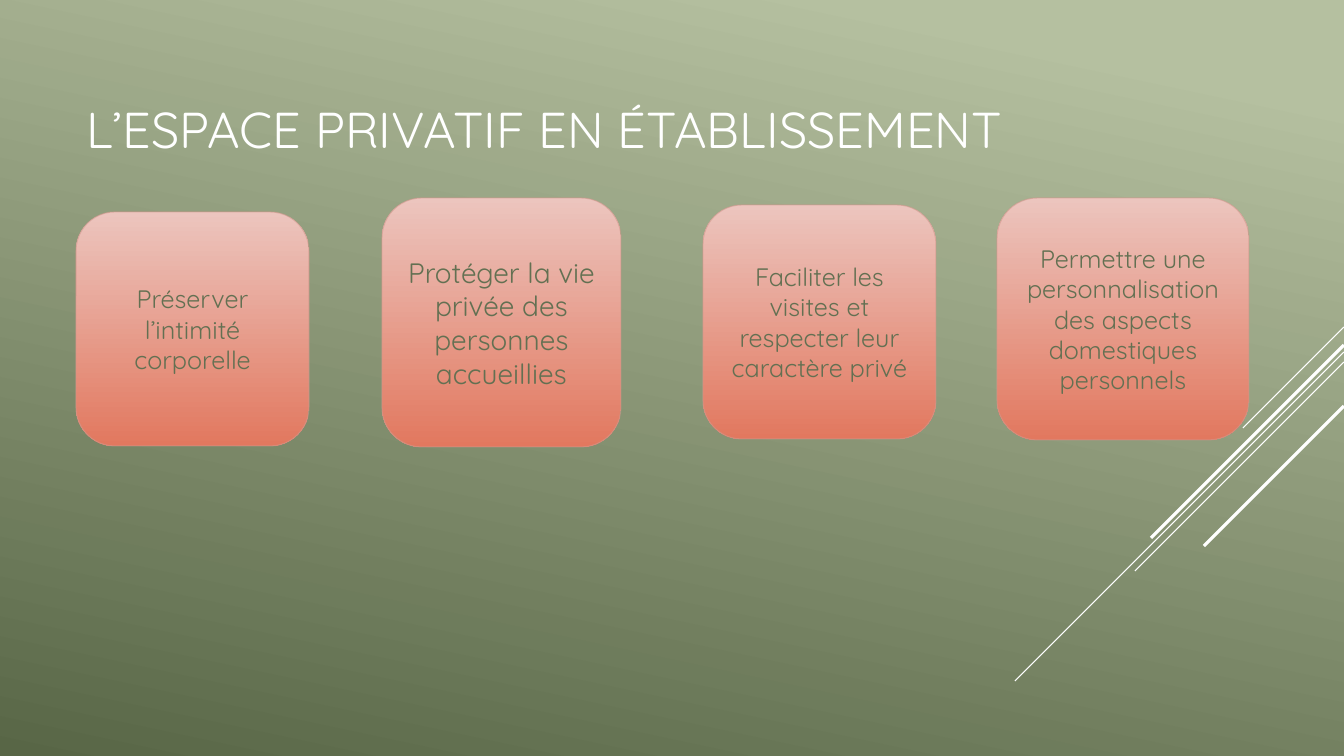
"""Build the slide on private space in care homes."""
from lxml import etree
from pptx import Presentation
from pptx import util as u
from pptx.dml.color import RGBColor
from pptx.enum import shapes, text
from pptx.oxml import ns

TITLE = "L’ESPACE PRIVATIF EN ÉTABLISSEMENT"
TITLE_AREA = (76, 45, 940, 166)
CARDS = [
    ("Préserver l’intimité corporelle", (76, 212, 233, 234), 18, (0, 0)),
    ("Protéger la vie privée des personnes accueillies", (382, 198, 239, 249), 20, (4, 6)),
    ("Faciliter les visites et respecter leur caractère privé", (703, 205, 233, 234), 18, (0, 0)),
    ("Permettre une personnalisation des aspects domestiques personnels",
     (997, 198, 252, 242), 18, (0, 0)),
]
DIAGONALS = [(327, 101, 0.75), (352, 329, 0.75), (362, 209, 0.75),
             (345, 193, 2.25), (406, 140, 2.25)]
COLORS = {"white": "FFFFFF", "sage": "B5C0A0", "moss": "586646", "blush": "ECC5BE",
          "coral": "E2785F", "edge": "CF988C", "olive": "637052"}
FONT = "Quicksand"
WIDTH, HEIGHT = 1344, 756
SCALE = 914400 / 100.8


def px(value):
    return u.Emu(round(value * SCALE))


def color(name):
    return RGBColor.from_string(COLORS[name])


def paint_gradient(fill, stops, clockwise):
    fill.gradient()
    fill.gradient_angle = 360 - clockwise
    for stop, (position, name) in zip(fill.gradient_stops, stops):
        stop.position = position
        stop.color.rgb = color(name)


def write(shape, words, size, name, align):
    frame = shape.text_frame
    frame.word_wrap = True
    frame.auto_size = text.MSO_AUTO_SIZE.NONE
    frame.vertical_anchor = text.MSO_ANCHOR.MIDDLE
    para = frame.paragraphs[0]
    para.alignment = align
    span = para.add_run()
    span.text = words
    span.font.name = FONT
    span.font.size = u.Pt(size)
    span.font.color.rgb = color(name)
    return para


def add_diagonal(page, top, reach, weight):
    line = page.shapes.add_connector(shapes.MSO_CONNECTOR.STRAIGHT, px(WIDTH), px(top),
                                     px(WIDTH - reach), px(top + reach))
    line.line.color.rgb = color("white")
    line.line.width = u.Pt(weight)
    etree.SubElement(line._element.spPr, ns.qn("a:effectLst"))


def add_card(page, words, area, size, spacing):
    box = page.shapes.add_shape(shapes.MSO_SHAPE.ROUNDED_RECTANGLE, *map(px, area))
    box.shadow.inherit = False
    paint_gradient(box.fill, [(0, "blush"), (1, "coral")], 90)
    box.line.color.rgb = color("edge")
    box.line.width = u.Pt(0.75)
    edge = box.line._ln.find(".//" + ns.qn("a:srgbClr"))
    etree.SubElement(edge, ns.qn("a:alpha"), val="60000")
    para = write(box, words, size, "olive", text.PP_ALIGN.CENTER)
    para.space_before, para.space_after = map(u.Pt, spacing)


def main():
    deck = Presentation()
    deck.slide_width, deck.slide_height = px(WIDTH), px(HEIGHT)
    page = deck.slides.add_slide(deck.slide_layouts[5])
    paint_gradient(page.background.fill, [(0.1, "sage"), (1, "moss")], 102)
    for diagonal in DIAGONALS:
        add_diagonal(page, *diagonal)
    title = page.shapes.title
    title.left, title.top, title.width, title.height = map(px, TITLE_AREA)
    write(title, TITLE, 36, "white", text.PP_ALIGN.LEFT)
    for card in CARDS:
        add_card(page, *card)
    deck.save("out.pptx")


if __name__ == "__main__":
    main()
